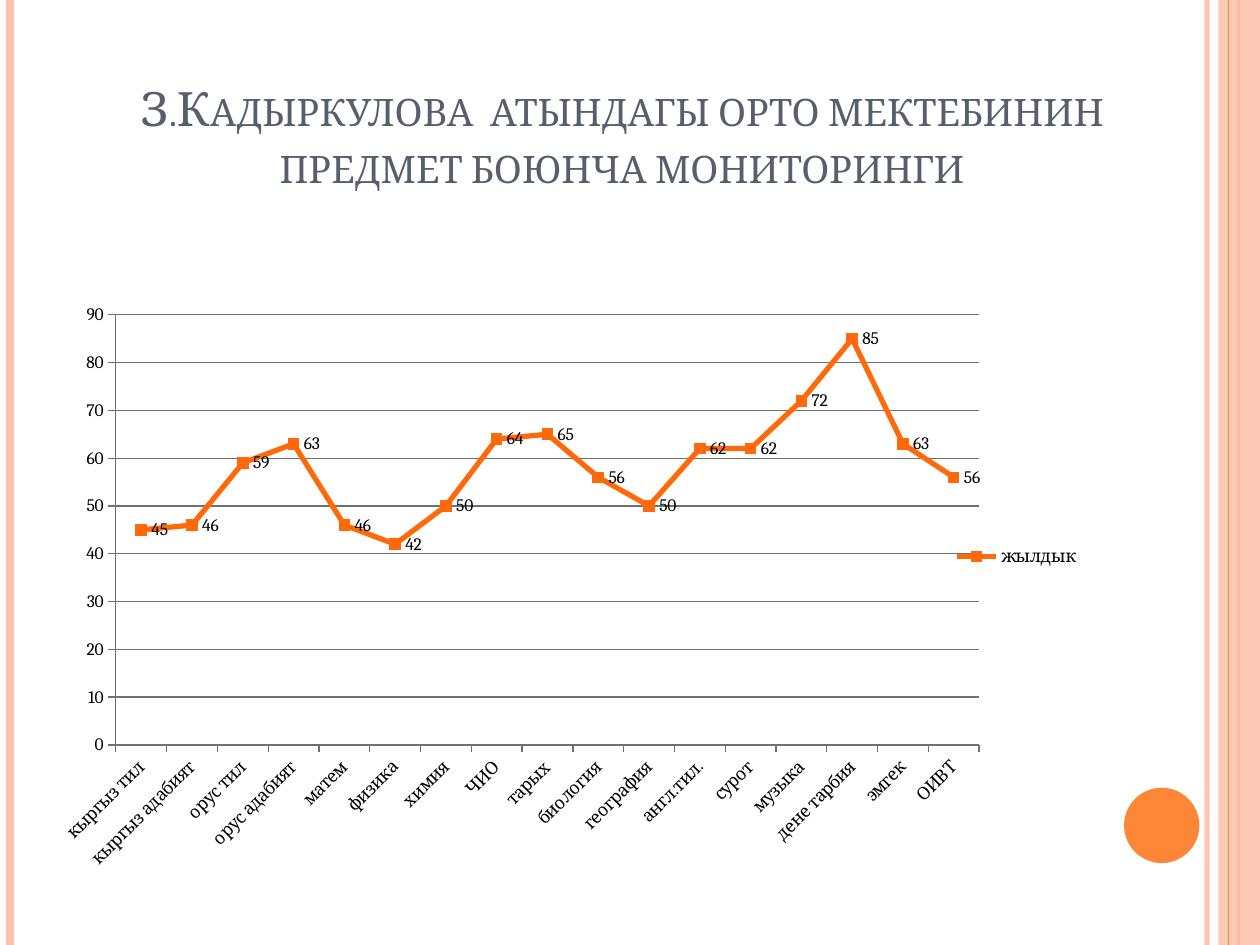
from lxml.etree import SubElement
from pptx import Presentation
from pptx.chart.data import CategoryChartData
from pptx.dml.color import RGBColor
from pptx.enum.chart import (XL_CHART_TYPE, XL_LABEL_POSITION, XL_LEGEND_POSITION,
                             XL_MARKER_STYLE, XL_TICK_MARK)
from pptx.enum.shapes import MSO_CONNECTOR, MSO_SHAPE
from pptx.enum.text import MSO_ANCHOR, PP_ALIGN
from pptx.oxml.ns import qn
from pptx.util import Cm, Pt

COLORS = {
    "peach": "FEC3AE",
    "orange": "FE8637",
    "series": "FF690A",
    "title": "575F6D",
    "axis": "707070",
    "text": "000000",
}
FONT = "Cambria"
SLIDE_WIDTH, SLIDE_HEIGHT = Cm(25.4), Cm(19.05)

SCORES = {
    "кыргыз тил": 45, "кыргыз адабият": 46, "орус тил": 59,
    "орус адабият": 63, "матем": 46, "физика": 42, "химия": 50,
    "ЧИО": 64, "тарых": 65, "биология": 56, "география": 50,
    "англ.тил.": 62, "сурот": 62, "музыка": 72, "дене тарбия": 85,
    "эмгек": 63, "ОИВТ": 56,
}


def color(name):
    return RGBColor.from_string(COLORS[name])


def set_opacity(element, percent):
    fill_color = next(element.iter(qn("a:srgbClr")))
    SubElement(fill_color, qn("a:alpha"), val=str(percent * 1000))


def style_line(line, color_name, width):
    line.color.rgb = color(color_name)
    line.width = Pt(width)


def add_stripe(slide, x, color_name, width, opacity=100):
    stripe = slide.shapes.add_connector(
        MSO_CONNECTOR.STRAIGHT, Cm(x), 0, Cm(x), SLIDE_HEIGHT)
    style_line(stripe.line, color_name, width)
    properties = stripe._element.spPr
    if opacity < 100:
        set_opacity(properties, opacity)
    SubElement(properties, qn("a:effectLst"))


def add_block(slide, kind, left, top, width, height, color_name, opacity=100):
    block = slide.shapes.add_shape(kind, left, top, width, height)
    block.shadow.inherit = False
    block.fill.solid()
    block.fill.fore_color.rgb = color(color_name)
    block.line.fill.background()
    if opacity < 100:
        set_opacity(block._element.spPr, opacity)


def add_title(slide, text):
    title = slide.shapes.add_textbox(Cm(1.27), Cm(0.76), Cm(22.55), Cm(4.4))
    frame = title.text_frame
    frame.word_wrap = True
    frame.vertical_anchor = MSO_ANCHOR.BOTTOM
    frame.margin_bottom = Cm(1.27)
    paragraph = frame.paragraphs[0]
    paragraph.alignment = PP_ALIGN.CENTER
    run = paragraph.add_run()
    run.text = text
    run.font.name = FONT
    run.font.size = Pt(27)
    run.font.color.rgb = color("title")
    run.font._element.set("cap", "small")


def place_plot(chart, x, y, width, height):
    plot_area = chart._chartSpace.chart.plotArea
    for old in plot_area.findall(qn("c:layout")):
        plot_area.remove(old)
    layout = SubElement(plot_area, qn("c:layout"))
    plot_area.insert(0, layout)
    manual = SubElement(layout, qn("c:manualLayout"))
    settings = {"layoutTarget": "inner", "xMode": "edge", "yMode": "edge",
                "x": x, "y": y, "w": width, "h": height}
    for tag, value in settings.items():
        SubElement(manual, qn(f"c:{tag}"), val=str(value))


def style_axes(chart):
    subjects, scale = chart.category_axis, chart.value_axis
    for axis in (subjects, scale):
        axis.major_tick_mark = XL_TICK_MARK.OUTSIDE
        axis.minor_tick_mark = XL_TICK_MARK.NONE
        axis.tick_labels.font.size = Pt(10)
        style_line(axis.format.line, "axis", 0.75)
    subjects.has_major_gridlines = False
    # Slant the subject names upwards by 45 degrees
    subjects._element.find(qn("c:txPr")).find(qn("a:bodyPr")).set("rot", "-2700000")
    scale.minimum_scale, scale.maximum_scale, scale.major_unit = 0, 90, 10
    scale.has_major_gridlines = True
    style_line(scale.major_gridlines.format.line, "axis", 0.75)


def style_series(series):
    series.smooth = False
    style_line(series.format.line, "series", 3)
    series.marker.style = XL_MARKER_STYLE.SQUARE
    series.marker.size = 6
    series.marker.format.fill.solid()
    series.marker.format.fill.fore_color.rgb = color("series")
    style_line(series.marker.format.line, "series", 0.75)
    labels = series.data_labels
    labels.show_value = True
    labels.position = XL_LABEL_POSITION.RIGHT


def add_score_chart(slide):
    data = CategoryChartData()
    data.categories = list(SCORES)
    data.add_series("жылдык", list(SCORES.values()))
    chart = slide.shapes.add_chart(
        XL_CHART_TYPE.LINE_MARKERS, Cm(1.27), Cm(4.45), Cm(20.75), Cm(13.55), data).chart
    chart.font.name = FONT
    chart.font.size = Pt(10)
    chart.font.color.rgb = color("text")
    chart.has_title = False
    chart.has_legend = True
    chart.legend.position = XL_LEGEND_POSITION.RIGHT
    chart.legend.include_in_layout = False
    chart.plots[0].vary_by_categories = False
    place_plot(chart, 0.05, 0.14, 0.84, 0.64)
    style_axes(chart)
    style_series(chart.plots[0].series[0])


def main():
    deck = Presentation()
    deck.slide_width, deck.slide_height = SLIDE_WIDTH, SLIDE_HEIGHT
    slide = deck.slides.add_slide(deck.slide_layouts[6])

    # Side stripes and the orange dot
    add_stripe(slide, 24.33, "peach", 3, opacity=93)
    add_stripe(slide, 0.2, "peach", 4.5)
    add_stripe(slide, 24.97, "orange", 1.5)
    band = Cm(0.84)
    add_block(slide, MSO_SHAPE.RECTANGLE, SLIDE_WIDTH - band, 0, band, SLIDE_HEIGHT,
              "peach", opacity=87)
    add_stripe(slide, 24.77, "orange", 0.75)
    add_block(slide, MSO_SHAPE.OVAL, Cm(22.66), Cm(15.88), Cm(1.52), Cm(1.52), "orange")

    # Title and yearly results by subject
    add_title(slide, "З.Кадыркулова  атындагы орто мектебинин предмет боюнча мониторинги")
    add_score_chart(slide)

    deck.save("out.pptx")


if __name__ == "__main__":
    main()
